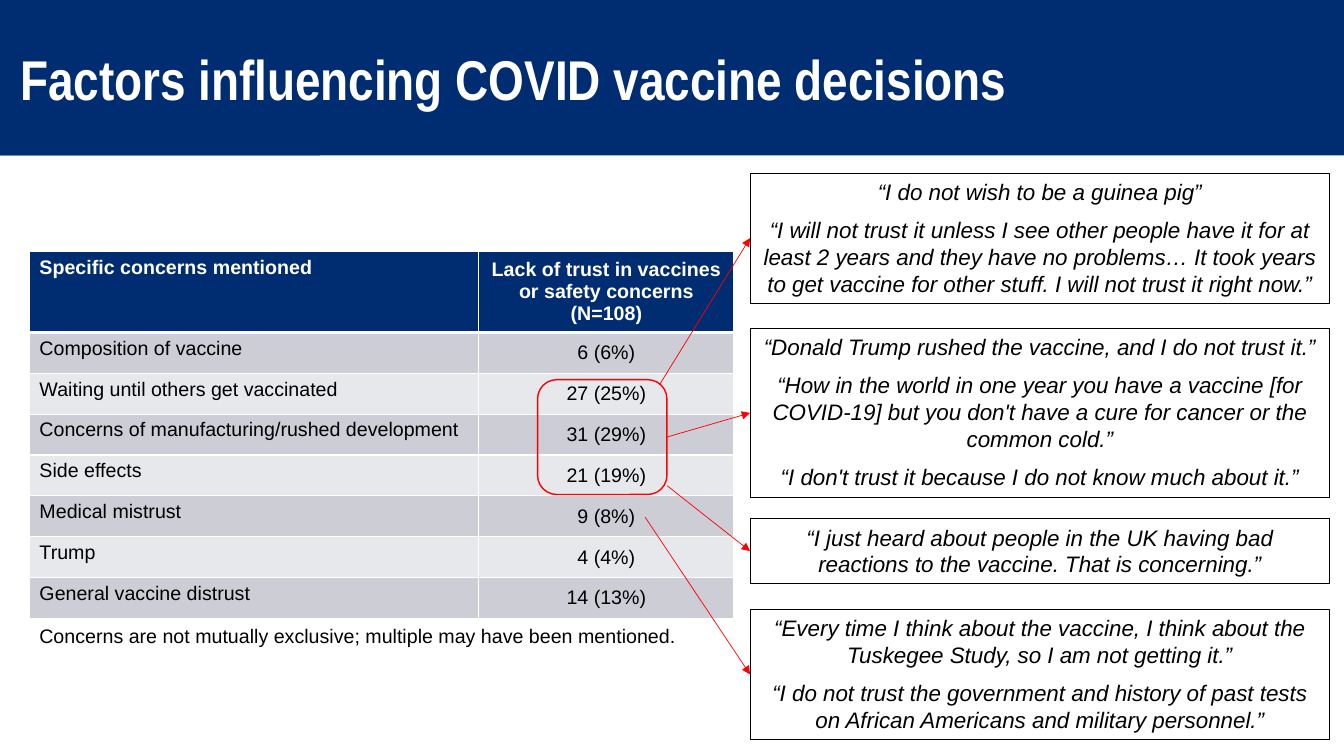
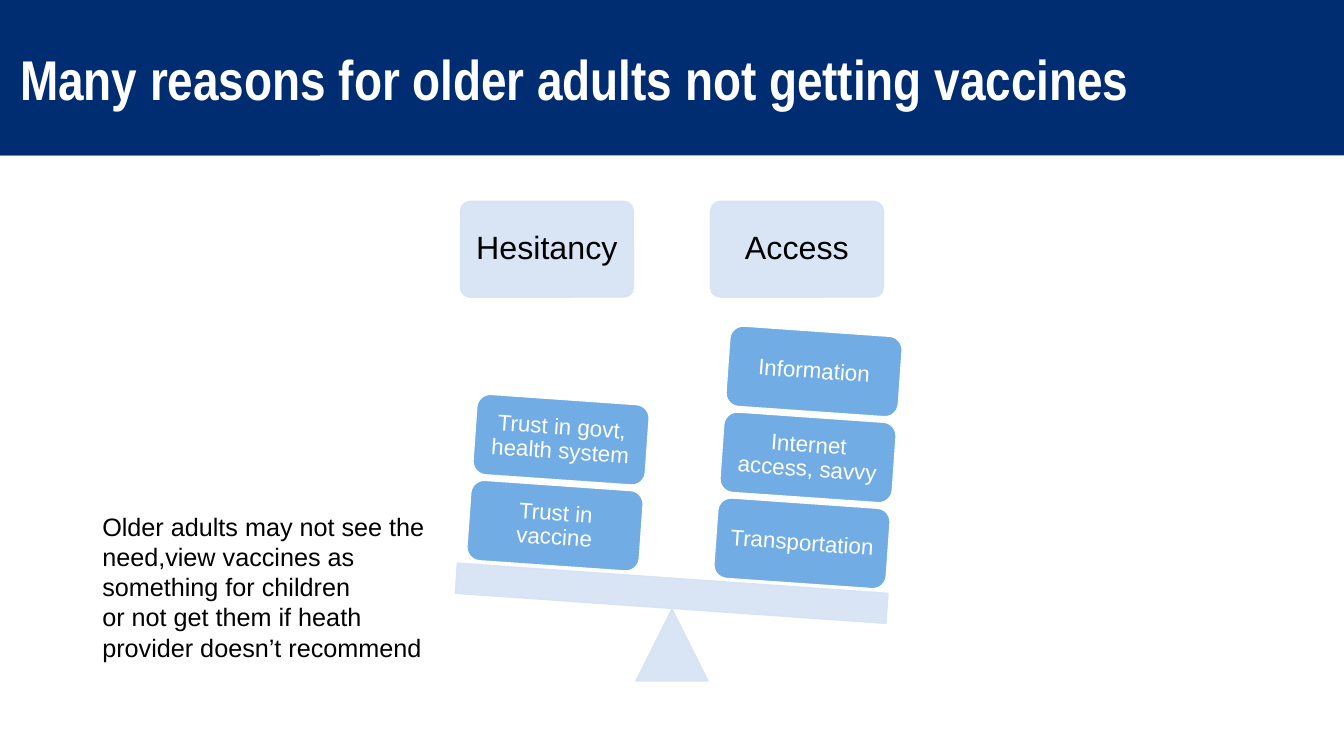
"""Build two slides on the reasons older adults decline vaccines."""
from dataclasses import dataclass
from typing import NamedTuple, Optional, Sequence

from lxml.etree import SubElement
from pptx import Presentation
from pptx.dml.color import RGBColor as Color
from pptx.enum.shapes import MSO_CONNECTOR as Link, MSO_SHAPE as Outline
from pptx.enum.text import MSO_ANCHOR as Anchor, PP_ALIGN as Align
from pptx.oxml import parse_xml
from pptx.oxml.ns import nsdecls, qn
from pptx.shapes.autoshape import Shape
from pptx.slide import Slide, SlideLayout
from pptx.text.text import TextFrame
from pptx.util import Pt


@dataclass(frozen=True)
class Theme:
    navy: str = "002C71"
    blue: str = "71ACE5"
    pale: str = "D5E3F5"
    dark_row: str = "CCCDD5"
    light_row: str = "E7E8EB"
    red: str = "FF0000"
    black: str = "000000"
    white: str = "FFFFFF"
    face: str = "Arial"
    title_face: str = "Arial Narrow"
    title_size: float = 40
    heading_size: float = 23
    note_size: float = 18
    quote_size: float = 16
    table_size: float = 14


THEME = Theme()


class Place(NamedTuple):
    left: float
    top: float
    width: float
    height: float

    def lengths(self) -> list[Pt]:
        return [Pt(value) for value in self]


class TextStyle(NamedTuple):
    size: float
    color: str = THEME.black
    face: str = THEME.face
    bold: bool = False
    italic: bool = False
    align: Align = Align.LEFT
    anchor: Anchor = Anchor.TOP
    spacing: Optional[float] = None
    after: float = 0
    margin: Optional[float] = None


class Quote(NamedTuple):
    top: float
    height: float
    lines: tuple[str, ...]
    arrow_start: Optional[tuple[float, float]]


class Stack(NamedTuple):
    heading: str
    heading_left: float
    base_left: float
    base_top: float
    blocks: tuple[str, ...]


TITLE = TextStyle(THEME.title_size, THEME.white, THEME.title_face, bold=True,
                  anchor=Anchor.MIDDLE)
NOTE = TextStyle(THEME.note_size)
FOOTNOTE = TextStyle(THEME.table_size)
QUOTE = TextStyle(THEME.quote_size, italic=True, align=Align.CENTER, after=8)
HEADING = TextStyle(THEME.heading_size, align=Align.CENTER,
                    anchor=Anchor.MIDDLE, spacing=0.9, margin=7.2)
BLOCK = TextStyle(THEME.quote_size, THEME.white, align=Align.CENTER,
                  anchor=Anchor.MIDDLE, spacing=0.9, margin=5)

CONCERNS = (
    ("Specific concerns mentioned",
     "Lack of trust in vaccines or safety concerns (N=108)"),
    ("Composition of vaccine", "6 (6%)"),
    ("Waiting until others get vaccinated", "27 (25%)"),
    ("Concerns of manufacturing/rushed development", "31 (29%)"),
    ("Side effects", "21 (19%)"),
    ("Medical mistrust", "9 (8%)"),
    ("Trump", "4 (4%)"),
    ("General vaccine distrust", "14 (13%)"),
)
QUOTES = (
    Quote(123.6, 93, (
        "“I do not wish to be a guinea pig”",
        "“I will not trust it unless I see other people have it for at least "
        "2 years and they have no problems… It took years to get vaccine for "
        "other stuff. I will not trust it right now.”"), (471, 275)),
    Quote(234.7, 120.5, (
        "“Donald Trump rushed the vaccine, and I do not trust it.”",
        "“How in the world in one year you have a vaccine [for COVID-19] but "
        "you don't have a cure for cancer or the common cold.”",
        "“I don't trust it because I do not know much about it.”"), None),
    Quote(370.5, 46.3, (
        "“I just heard about people in the UK having bad reactions to the "
        "vaccine. That is concerning.”",), (476.6, 347)),
    Quote(435.2, 93, (
        "“Every time I think about the vaccine, I think about the Tuskegee "
        "Study, so I am not getting it.”",
        "“I do not trust the government and history of past tests on African "
        "Americans and military personnel.”"), (460.8, 369.4)),
)
STACKS = (
    Stack("Hesitancy", 329, 334.8, 346.7,
          ("Trust in vaccine", "Trust in govt, health system")),
    Stack("Access", 507.6, 511.2, 359.3,
          ("Transportation", "Internet access, savvy", "Information")),
)
TILT = 4
BLOCK_SHIFT, BLOCK_RISE = 4.3, 61.4


def write(frame: TextFrame, lines: Sequence[str], style: TextStyle) -> None:
    frame.word_wrap = True
    frame.vertical_anchor = style.anchor
    if style.margin is not None:
        frame.margin_left = frame.margin_right = Pt(style.margin)
        frame.margin_top = frame.margin_bottom = Pt(style.margin)
    for index, line in enumerate(lines):
        para = frame.add_paragraph() if index else frame.paragraphs[0]
        para.text = line
        para.alignment = style.align
        para.space_after = Pt(style.after)
        if style.spacing:
            para.line_spacing = style.spacing
        font = para.font
        font.name, font.size = style.face, Pt(style.size)
        font.bold, font.italic = style.bold, style.italic
        font.color.rgb = Color.from_string(style.color)


def draw_shape(page: Slide, outline: Outline, place: Place,
               fill: Optional[str] = None, line: Optional[str] = None,
               weight: float = 1, opacity: int = 100, tilt: float = 0) -> Shape:
    shape = page.shapes.add_shape(outline, *place.lengths())
    shape.shadow.inherit = False
    shape.rotation = tilt
    for paint, color in ((shape.fill, fill), (shape.line.fill, line)):
        if color:
            paint.solid()
            paint.fore_color.rgb = Color.from_string(color)
        else:
            paint.background()
    if line:
        shape.line.width = Pt(weight)
    if opacity < 100:
        for color_mark in list(shape.element.spPr.iter(qn("a:srgbClr"))):
            SubElement(color_mark, qn("a:alpha"), val=str(opacity * 1000))
    return shape


def draw_text(page: Slide, place: Place, lines: Sequence[str],
              style: TextStyle) -> None:
    write(page.shapes.add_textbox(*place.lengths()).text_frame, lines, style)


def add_page(deck: Presentation, layout: SlideLayout, title: str) -> Slide:
    page = deck.slides.add_slide(layout)
    write(page.shapes.title.text_frame, [title], TITLE)
    return page


def furnish_layout(page: Slide, layout: SlideLayout) -> None:
    title = layout.placeholders[0]
    title.left, title.top, title.width, title.height = Place(
        7.2, 7.2, 945.6, 97.2).lengths()
    for index, (width, opacity) in enumerate(((960, 100), (228.5, 90))):
        band = draw_shape(page, Outline.RECTANGLE, Place(0, 0, width, 111),
                          THEME.navy, opacity=opacity)
        band.element.nvSpPr.cNvPr.set("id", str(100 + index))
        layout.shapes.element.insert(2 + index, band.element)


def draw_concerns(page: Slide, place: Place) -> None:
    table = page.shapes.add_table(len(CONCERNS), 2, *place.lengths()).table
    for column, width in zip(table.columns, (321, place.width - 321)):
        column.width = Pt(width)
    header_height = 58
    row_height = (place.height - header_height) / (len(CONCERNS) - 1)
    for row, texts in enumerate(CONCERNS):
        header = row == 0
        table.rows[row].height = Pt(header_height if header else row_height)
        fill = THEME.dark_row if row % 2 else THEME.light_row
        for column, text in enumerate(texts):
            cell = table.cell(row, column)
            cell.fill.solid()
            cell.fill.fore_color.rgb = Color.from_string(
                THEME.navy if header else fill)
            write(cell.text_frame, [text], TextStyle(
                THEME.table_size, THEME.white if header else THEME.black,
                bold=header, align=Align.CENTER if column else Align.LEFT))
            cell.vertical_anchor = Anchor.MIDDLE if column else Anchor.TOP
            for index, side in enumerate("LRTB"):
                thick = (header and side == "B") or (row == 1 and side == "T")
                cell._tc.get_or_add_tcPr().insert(index, parse_xml(
                    f'<a:ln{side} {nsdecls("a")} w="{Pt(3 if thick else 1)}">'
                    f'<a:solidFill><a:srgbClr val="{THEME.white}"/>'
                    f'</a:solidFill></a:ln{side}>'))


def draw_arrow(page: Slide, start: Optional[tuple[float, float]],
               ring: Shape, box: Shape) -> None:
    left, top = start or (0, 0)
    arrow = page.shapes.add_connector(
        Link.STRAIGHT, Pt(left), Pt(top), box.left, box.top)
    if start is None:
        arrow.begin_connect(ring, 3)
    arrow.end_connect(box, 1)
    arrow.line.color.rgb = Color.from_string(THEME.red)
    arrow.line.width = Pt(0.5)
    properties = arrow.element.spPr
    SubElement(properties.find(qn("a:ln")), qn("a:tailEnd"), type="triangle")
    SubElement(properties, qn("a:effectLst"))


def fill_factors(page: Slide) -> None:
    draw_text(page, Place(21, 442, 503.3, 24.5),
              ["Concerns are not mutually exclusive; multiple may have been "
               "mentioned."], FOOTNOTE)
    draw_concerns(page, Place(21, 179.4, 503.3, 262.4))
    ring = draw_shape(page, Outline.ROUNDED_RECTANGLE,
                      Place(384, 271.2, 92.4, 82), line=THEME.red)
    for quote in QUOTES:
        box = draw_shape(page, Outline.RECTANGLE,
                         Place(535.8, quote.top, 414, quote.height),
                         line=THEME.black, weight=0.75)
        write(box.text_frame, quote.lines, QUOTE)
        draw_arrow(page, quote.arrow_start, ring, box)


def fill_reasons(page: Slide) -> None:
    for outline, place, tilt in (
            (Outline.ISOSCELES_TRIANGLE, Place(454.3, 435, 51.4, 51.4), 0),
            (Outline.RECTANGLE, Place(325.6, 413, 308.4, 21.6), TILT)):
        draw_shape(page, outline, place, THEME.pale, THEME.pale,
                   opacity=90, tilt=tilt)
    for stack in STACKS:
        heading = draw_shape(page, Outline.ROUNDED_RECTANGLE,
                             Place(stack.heading_left, 143.8, 123.4, 68.4),
                             THEME.pale, THEME.pale, opacity=90)
        heading.adjustments[0] = 0.1
        write(heading.text_frame, [stack.heading], HEADING)
        for level, text in enumerate(stack.blocks):
            place = Place(stack.base_left + level * BLOCK_SHIFT,
                          stack.base_top - level * BLOCK_RISE, 123.4, 57.6)
            block = draw_shape(page, Outline.ROUNDED_RECTANGLE, place,
                               THEME.blue, THEME.white, tilt=TILT)
            write(block.text_frame, [text], BLOCK)
    draw_text(page, Place(66, 361.5, 246.4, 116.6),
              ["Older adults may not see the need,view vaccines as something "
               "for children",
               "or not get them if heath provider doesn’t recommend"], NOTE)


def main() -> None:
    deck = Presentation()
    deck.slide_width, deck.slide_height = Pt(960), Pt(540)
    layout = deck.slide_layouts[5]
    factors = add_page(deck, layout, "Factors influencing COVID vaccine decisions")
    furnish_layout(factors, layout)
    fill_factors(factors)
    fill_reasons(add_page(
        deck, layout, "Many reasons for older adults not getting vaccines"))
    deck.save("out.pptx")


if __name__ == "__main__":
    main()
